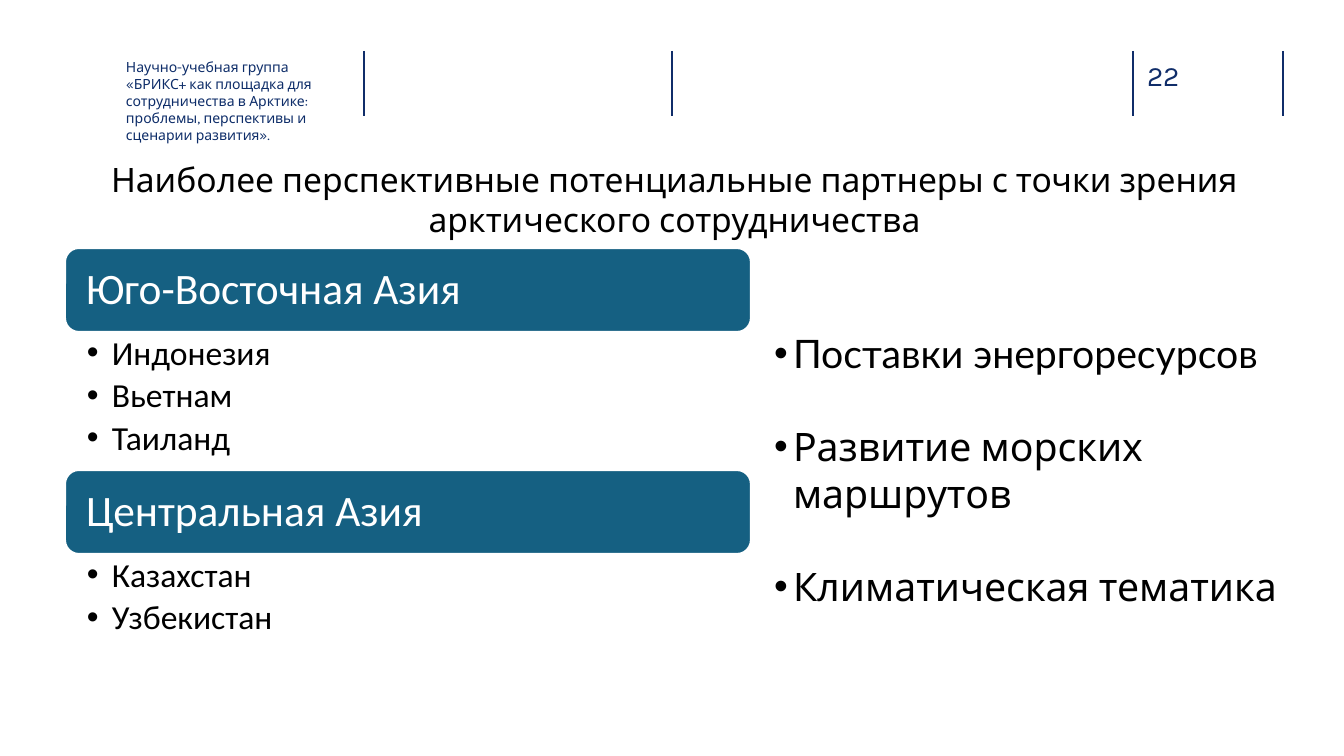
from pptx import Presentation
from pptx import util as u
from pptx.dml.color import RGBColor
from pptx.enum import shapes, text
from lxml import etree

EMU_PER_PX = 914400 / 100.8
NAVY = RGBColor(0x10, 0x2D, 0x69)
HEADER_NAVY = RGBColor(0x0E, 0x2D, 0x69)
TEAL = RGBColor(0x15, 0x60, 0x82)
BLACK = RGBColor(0x00, 0x00, 0x00)
WHITE = RGBColor(0xFF, 0xFF, 0xFF)
DRAWING = "{http://schemas.openxmlformats.org/drawingml/2006/main}"


def px(*lengths):
    return [u.Emu(round(length * EMU_PER_PX)) for length in lengths]


def fill_text(shape, lines, size, color, insets=(0, 0, 0, 0), indent=0, before=0, after=0,
              spacing=None, align=text.PP_ALIGN.LEFT):
    """Write (wording, font) lines; a non-zero indent gives them bullets."""
    frame = shape.text_frame
    frame.word_wrap = True
    frame.margin_left, frame.margin_top, frame.margin_right, frame.margin_bottom = px(*insets)
    for index, (wording, font) in enumerate(lines):
        paragraph = frame.paragraphs[0] if index == 0 else frame.add_paragraph()
        paragraph.alignment = align
        paragraph.line_spacing = spacing
        paragraph.space_before = u.Pt(before if index else 0)
        paragraph.space_after = u.Pt(after)
        if indent:
            properties = paragraph._p.get_or_add_pPr()
            hanging = px(indent)[0]
            properties.set("marL", str(hanging))
            properties.set("indent", str(-hanging))
            etree.SubElement(properties, DRAWING + "buFont").set("typeface", "Arial")
            etree.SubElement(properties, DRAWING + "buChar").set("char", "•")
        run = paragraph.add_run()
        run.text = wording
        run.font.name = font
        run.font.size = u.Pt(size)
        run.font.color.rgb = color


presentation = Presentation()
presentation.slide_width, presentation.slide_height = px(1344, 756)
slide = presentation.slides.add_slide(presentation.slide_layouts[6])

# Header dividers
for x in (364, 672, 1133, 1283):
    divider = slide.shapes.add_connector(shapes.MSO_CONNECTOR.STRAIGHT, *px(x, 51, x, 116))
    divider.line.color.rgb = NAVY
    divider.line.width = u.Pt(1)
    etree.SubElement(divider._element.spPr, DRAWING + "effectLst")

# Page number, group name and title
page_number = slide.shapes.add_textbox(*px(1147, 58, 74, 34))
fill_text(page_number, [("22", "Karla")], 20, NAVY)

group_name = slide.shapes.add_textbox(*px(126, 59, 210, 45))
fill_text(group_name, [("Научно-учебная группа «БРИКС+ как площадка для сотрудничества в Арктике: "
                        "проблемы, перспективы и сценарии развития».", "Karla")], 10, HEADER_NAVY)

title = slide.shapes.add_textbox(*px(65, 159, 1219, 86))
fill_text(title, [("Наиболее перспективные потенциальные партнеры с точки зрения "
                   "арктического сотрудничества", "Karla")], 24, BLACK,
          align=text.PP_ALIGN.CENTER)

# Regions with their countries
regions = [
    ("Юго-Восточная Азия", ["Индонезия", "Вьетнам", "Таиланд"]),
    ("Центральная Азия", ["Казахстан", "Узбекистан"]),
]
for index, (region, countries) in enumerate(regions):
    top = 248 + 222 * index
    banner = slide.shapes.add_shape(shapes.MSO_SHAPE.ROUNDED_RECTANGLE, *px(65, top, 686, 84))
    banner.shadow.inherit = False
    banner.fill.solid()
    banner.fill.fore_color.rgb = TEAL
    banner.line.color.rgb = WHITE
    banner.line.width = u.Pt(1.5)
    banner.text_frame.vertical_anchor = text.MSO_ANCHOR.MIDDLE
    fill_text(banner, [(region, "Calibri")], 31, WHITE, insets=(17, 17, 17, 17), spacing=0.9)

    country_list = slide.shapes.add_textbox(*px(65, top + 84, 686, 46 * len(countries)))
    fill_text(country_list, [(country, "Calibri") for country in countries], 24, BLACK,
              insets=(22, 4, 24, 4), indent=25, after=4.5, spacing=0.9)

# Areas of cooperation
cooperation = slide.shapes.add_textbox(*px(764, 324, 550, 248))
fill_text(cooperation, [("Поставки энергоресурсов", "Lato"),
                        ("Развитие морских маршрутов", "Karla"),
                        ("Климатическая тематика", "Karla")], 28, BLACK,
          insets=(10, 5, 10, 5), indent=19, before=33)

presentation.save("out.pptx")
